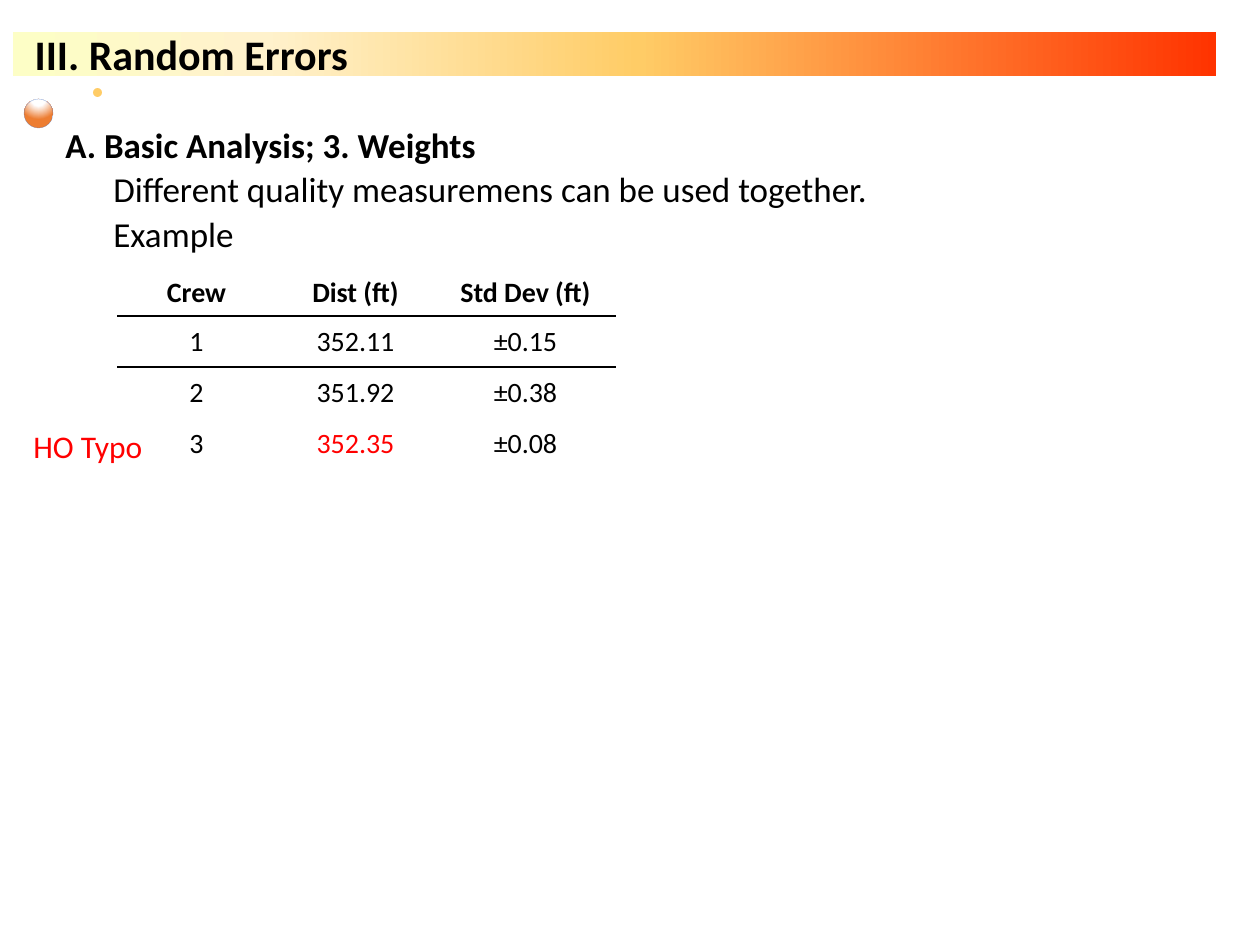
"""Build the Random Errors slide on weighted measurements."""
from lxml.etree import SubElement
from pptx import Presentation
from pptx.dml.color import RGBColor
from pptx.enum.shapes import MSO_SHAPE
from pptx.enum.text import MSO_ANCHOR, PP_ALIGN
from pptx.oxml import parse_xml
from pptx.oxml.ns import nsdecls, qn
from pptx.util import Pt

PX = 914400 / 126
COLORS = {
    "black": "000000", "white": "FFFFFF", "red": "FF0000", "gold": "FFCC66",
    "scarlet": "FF3300", "cream": "FFF2CC", "yellow": "FDFEC6",
    "orange": "ED7D31", "blue": "3B6BC1",
}


def px(*lengths):
    return [round(length * PX) for length in lengths]


def write_text(paragraph, text, size=20, bold=False, color="black", align=PP_ALIGN.LEFT):
    paragraph.alignment = align
    run = paragraph.add_run()
    run.text = text
    run.font.name = "Calibri"
    run.font.size = Pt(size)
    run.font.bold = bold
    run.font.color.rgb = RGBColor.from_string(COLORS[color])


presentation = Presentation()
presentation.slide_width, presentation.slide_height = px(1260, 945)
slide = presentation.slides.add_slide(presentation.slide_layouts[5])
shapes = slide.shapes
title = shapes.title

LINEAR = '<a:lin ang="10800000" scaled="0"/>'
RADIAL = ('<a:path path="circle"><a:fillToRect l="50000" t="-80000" '
          'r="50000" b="180000"/></a:path>')
banner_stops = [(0, "scarlet"), (48, "gold"), (79, "cream"), (100, "yellow")]
ball_stops = [(0, "white"), (35, "white"), (100, "orange")]
decorations = [
    (MSO_SHAPE.RECTANGLE, (13, 32, 1203, 44), banner_stops, LINEAR),
    (MSO_SHAPE.OVAL, (24, 99, 29, 29), ball_stops, RADIAL),
    (MSO_SHAPE.OVAL, (93, 88, 9, 9), None, None),
]
for kind, box, stops, direction in decorations:
    shape = shapes.add_shape(kind, *px(*box))
    shape.shadow.inherit = False
    shape.line.fill.background()
    shape.fill.solid()
    shape.fill.fore_color.rgb = RGBColor.from_string(COLORS["gold"])
    if stops:
        stop_xml = "".join(
            f'<a:gs pos="{position * 1000}"><a:srgbClr val="{COLORS[color]}"/></a:gs>'
            for position, color in stops)
        properties = shape._element.spPr
        properties.replace(properties.find(qn("a:solidFill")), parse_xml(
            f'<a:gradFill {nsdecls("a")} rotWithShape="1">'
            f'<a:gsLst>{stop_xml}</a:gsLst>{direction}</a:gradFill>'))
    if direction == RADIAL:
        shape.line.width = Pt(0.16)
        shape.line.color.rgb = RGBColor.from_string(COLORS["blue"])
        line_color = shape.line._ln.find(".//" + qn("a:srgbClr"))
        SubElement(line_color, qn("a:alpha"), val="60000")

shapes._spTree.append(title._element)
title.left, title.top, title.width, title.height = px(22, 22, 919, 63)
title.text_frame.vertical_anchor = MSO_ANCHOR.MIDDLE
write_text(title.text_frame.paragraphs[0], "III. Random Errors", size=24, bold=True)

body = shapes.add_textbox(*px(53, 122, 1086, 738)).text_frame
body.word_wrap = True
outline = [
    ("A. Basic Analysis; 3. Weights", 0),
    ("Different quality measuremens can be used together.", 1),
    ("Example", 1),
]
for index, (text, level) in enumerate(outline):
    paragraph = body.add_paragraph() if index else body.paragraphs[0]
    paragraph.level = level
    paragraph.line_spacing = 0.9
    paragraph.space_before = Pt(3.8 if level else 7.5)
    write_text(paragraph, text, bold=level == 0)
    paragraph._p.get_or_add_pPr().set("marL", str(px(48 * level)[0]))

rows = [
    ("Crew", "Dist (ft)", "Std Dev (ft)"),
    ("1", "352.11", "±0.15"),
    ("2", "351.92", "±0.38"),
    ("3", "352.35", "±0.08"),
    (),
]
column_widths = px(159, 159, 181, 137, 159, 159)
row_heights = px(46, 51, 51, 51, 51)
table = shapes.add_table(len(rows), len(column_widths), *px(117, 270, 954, 250)).table
table.first_row = table.horz_banding = False
table._tbl.tblPr.find(qn("a:tableStyleId")).text = "{2D5ABB26-0587-4C30-8999-92F81FD0307C}"
for column, width in zip(table.columns, column_widths):
    column.width = width
for row_index, (row, height) in enumerate(zip(table.rows, row_heights)):
    row.height = height
    for column_index, cell in enumerate(row.cells):
        cell.fill.background()
        cell.vertical_anchor = MSO_ANCHOR.MIDDLE
        paragraph = cell.text_frame.paragraphs[0]
        if column_index >= len(rows[row_index]):
            SubElement(paragraph._p, qn("a:endParaRPr"), sz="1600")
            continue
        text = rows[row_index][column_index]
        write_text(paragraph, text, size=16, bold=row_index == 0,
                   color="red" if text == "352.35" else "black", align=PP_ALIGN.CENTER)
        if row_index < 2:
            cell._tc.get_or_add_tcPr().insert(0, parse_xml(
                f'<a:lnB {nsdecls("a")} w="12700"><a:solidFill>'
                f'<a:srgbClr val="{COLORS["black"]}"/></a:solidFill></a:lnB>'))

note = shapes.add_textbox(*px(21, 421, 136, 50)).text_frame
note.word_wrap = False
write_text(note.paragraphs[0], "HO Typo", size=18, color="red")

presentation.save("out.pptx")
